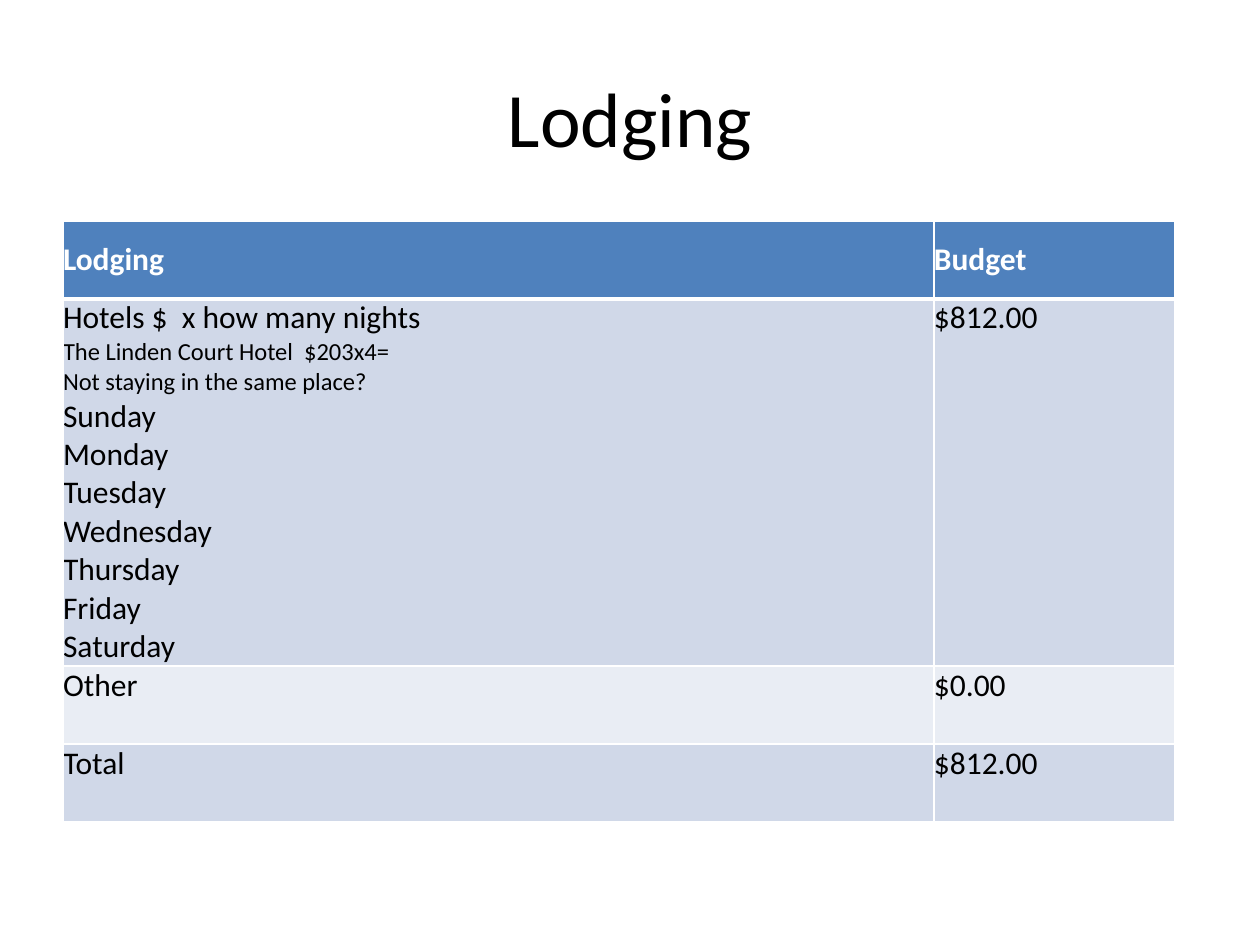
from lxml import etree
from pptx import Presentation
from pptx.dml.color import RGBColor
from pptx.enum.text import MSO_ANCHOR, PP_ALIGN
from pptx.oxml.ns import qn
from pptx.util import Pt

MIDDLE, TOP = MSO_ANCHOR.MIDDLE, MSO_ANCHOR.TOP
CENTER, LEFT = PP_ALIGN.CENTER, PP_ALIGN.LEFT
BLACK = RGBColor(0x00, 0x00, 0x00)
WHITE = RGBColor(0xFF, 0xFF, 0xFF)
BLUE = RGBColor(0x4F, 0x81, 0xBD)
BAND = RGBColor(0xD0, 0xD8, 0xE8)
PALE = RGBColor(0xE9, 0xED, 0xF4)
SCALE = 914400 / 126


def px(n):
    return round(n * SCALE)


def write(frame, lines, color, bold, align):
    for i, (text, size) in enumerate(lines):
        para = frame.paragraphs[0] if i == 0 else frame.add_paragraph()
        para.alignment = align
        run = para.add_run()
        run.text = text
        look = {"name": "Calibri", "size": Pt(size), "bold": bold}
        for key, value in look.items():
            setattr(run.font, key, value)
        run.font.color.rgb = color


deck = Presentation()
deck.slide_width, deck.slide_height = px(1260), px(945)
slide = deck.slides.add_slide(deck.slide_layouts[5])

title = slide.shapes.title
place = {"left": 63, "top": 38, "width": 1134, "height": 157}
for key, value in place.items():
    setattr(title, key, px(value))
title.text_frame.vertical_anchor = MIDDLE
write(title.text_frame, [("Lodging", 44)], BLACK, False, CENTER)

days = ["Sunday", "Monday", "Tuesday", "Wednesday", "Thursday", "Friday", "Saturday"]
stay = [
    ("Hotels $  x how many nights", 18),
    ("The Linden Court Hotel  $203x4=", 14),
    ("Not staying in the same place?", 14),
] + [(day, 18) for day in days]
rows = [
    (78, BLUE, [("Lodging", 18)], "Budget"),
    (367, BAND, stay, "$812.00"),
    (78, PALE, [("Other", 18)], "$0.00"),
    (78, BAND, [("Total", 18)], "$812.00"),
]
cols = [871, 241]

table = slide.shapes.add_table(
    len(rows), len(cols), px(63), px(221), px(sum(cols)), px(sum(r[0] for r in rows))
).table
for col, width in zip(table.columns, cols):
    col.width = px(width)

for r, (height, fill, lines, cost) in enumerate(rows):
    table.rows[r].height = px(height)
    head = r == 0
    for c, words in enumerate([lines, [(cost, 18)]]):
        cell = table.cell(r, c)
        for side in ("left", "right", "top", "bottom"):
            setattr(cell, "margin_" + side, 0)
        cell.vertical_anchor = MIDDLE if head else TOP
        props = cell._tc.get_or_add_tcPr()
        for side in "LRTB":
            thick = (head and side == "B") or (r == 1 and side == "T")
            line = etree.SubElement(props, qn("a:ln" + side), w=str(Pt(3 if thick else 1)))
            paint = etree.SubElement(line, qn("a:solidFill"))
            etree.SubElement(paint, qn("a:srgbClr"), val=str(WHITE))
        cell.fill.solid()
        cell.fill.fore_color.rgb = fill
        write(cell.text_frame, words, WHITE if head else BLACK, head, LEFT)

deck.save("out.pptx")
